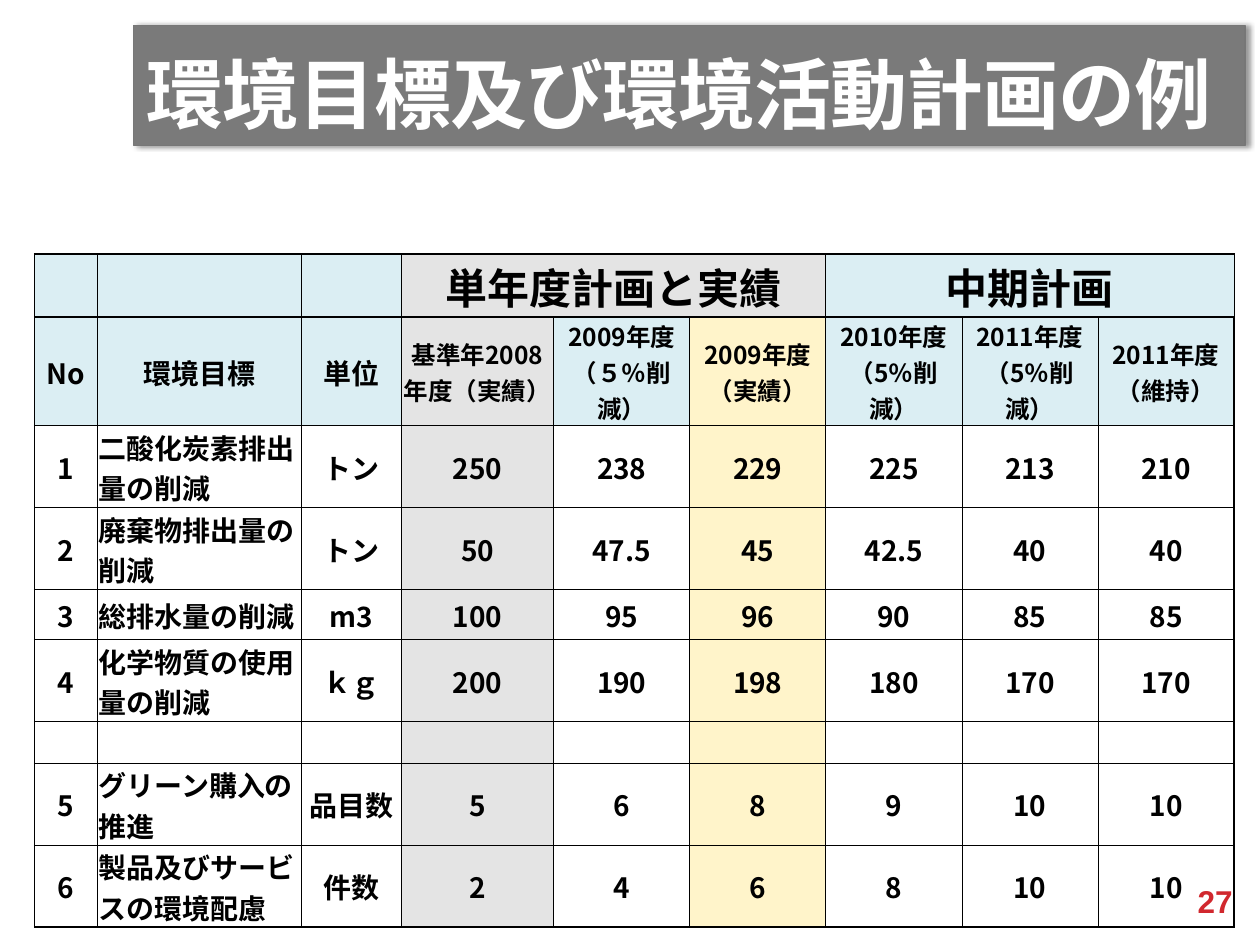
"""Build a slide with a table of environmental targets and yearly plans."""
import dataclasses

import lxml.etree
import pptx
import pptx.dml.color
import pptx.enum.text
import pptx.oxml
import pptx.oxml.ns
import pptx.util


@dataclasses.dataclass(frozen=True)
class Theme:
    latin: str = "Arial"
    japanese: str = "Noto Sans CJK JP"
    black: str = "000000"
    white: str = "FFFFFF"
    banner: str = "7A7A7A"
    banner_line: str = "777777"
    number: str = "D1282E"
    header: str = "DBEEF3"
    baseline: str = "E4E4E4"
    actual: str = "FFF4CA"
    title_size: int = 44
    group_size: int = 24
    number_size: int = 18
    body_size: int = 16
    year_size: int = 14
    thick: float = 1
    thin: float = 0.5


theme = Theme()
rgb = pptx.dml.color.RGBColor.from_string
qn = pptx.oxml.ns.qn
align = pptx.enum.text.PP_ALIGN
anchor = pptx.enum.text.MSO_ANCHOR


def style(paragraph, size, color, latin, alignment):
    paragraph.alignment = alignment
    font = paragraph.font
    font.name, font.size, font.bold = latin, pptx.util.Pt(size), True
    font.color.rgb = rgb(color)
    properties = paragraph._p.pPr.find(qn("a:defRPr"))
    lxml.etree.SubElement(properties, qn("a:ea"), typeface=theme.japanese)
    return properties


def draw_borders(cell, widths):
    properties = cell._tc.get_or_add_tcPr()
    for position, (side, points) in enumerate(zip("LRTB", widths)):
        properties.insert(position, pptx.oxml.parse_xml(
            f'<a:ln{side} xmlns:a="http://schemas.openxmlformats.org/drawingml/2006/main" '
            f'w="{pptx.util.Pt(points)}"><a:solidFill><a:srgbClr val="{theme.black}"/>'
            f'</a:solidFill></a:ln{side}>'))


presentation = pptx.Presentation()
presentation.slide_width = pptx.util.Inches(10)
presentation.slide_height = pptx.util.Inches(7.5)
width, height = presentation.slide_width, presentation.slide_height
slide = presentation.slides.add_slide(presentation.slide_layouts[5])

title = slide.shapes.title
title.left, title.top = int(width * 0.106), int(height * 0.027)
title.width, title.height = int(width * 0.882), int(height * 0.127)
title.fill.solid()
title.fill.fore_color.rgb = rgb(theme.banner)
title.line.color.rgb = rgb(theme.banner_line)
title.line.width = pptx.util.Pt(theme.thick)
title.shadow.inherit = False
shadow = lxml.etree.SubElement(
    title._element.spPr.find(qn("a:effectLst")), qn("a:outerShdw"),
    blurRad=str(pptx.util.Pt(3.1)), dist=str(pptx.util.Pt(1.8)), dir="0")
shadow_color = lxml.etree.SubElement(shadow, qn("a:srgbClr"), val=theme.black)
lxml.etree.SubElement(shadow_color, qn("a:alpha"), val="40000")
title.text_frame.text = "環境目標及び環境活動計画の例"
title.text_frame.auto_size = pptx.enum.text.MSO_AUTO_SIZE.NONE
title.text_frame.vertical_anchor = anchor.BOTTOM
title_font = style(title.text_frame.paragraphs[0], theme.title_size,
                   theme.white, theme.latin, align.LEFT)
title_font.set("spc", "-60")

number = slide.shapes.add_textbox(
    int(width * 0.933), int(height * 0.927), int(width * 0.063), int(height * 0.053))
number.text_frame.word_wrap = True
number.text_frame.vertical_anchor = anchor.MIDDLE
number.text_frame.text = "27"
style(number.text_frame.paragraphs[0], theme.number_size, theme.number,
      theme.latin, align.CENTER)

rows = [
    ["", "", "", "単年度計画と実績", "", "", "中期計画", "", ""],
    ["No", "環境目標", "単位", "基準年2008\v年度（実績）", "2009年度\v（５％削減）",
     "2009年度\v（実績）", "2010年度\v（5％削減）", "2011年度\v（5％削減）",
     "2011年度\v（維持）"],
    ["1", "二酸化炭素排出量の削減", "トン", "250", "238", "229", "225", "213", "210"],
    ["2", "廃棄物排出量の削減", "トン", "50", "47.5", "45", "42.5", "40", "40"],
    ["3", "総排水量の削減", "m3", "100", "95", "96", "90", "85", "85"],
    ["4", "化学物質の使用量の削減", "ｋｇ", "200", "190", "198", "180", "170", "170"],
    [""] * 9,
    ["5", "グリーン購入の推進", "品目数", "5", "6", "8", "9", "10", "10"],
    ["6", "製品及びサービスの環境配慮", "件数", "2", "4", "6", "8", "10", "10"],
]
column_widths = [0.5, 1.62, 0.79, 1.21] + [1.08] * 5
row_heights = [0.5, 0.86, 0.65, 0.65, 0.4, 0.65, 0.33, 0.65, 0.65]
thick_columns, thick_rows = {0, 3, 9}, {0, 1, 2, 9}
column_fills = {3: theme.baseline, 5: theme.actual}

table = slide.shapes.add_table(
    len(rows), len(column_widths), int(width * 0.0275), int(height * 0.269),
    pptx.util.Inches(sum(column_widths)), pptx.util.Inches(sum(row_heights))).table
table.first_row = table.horz_banding = False
for column, inches in zip(table.columns, column_widths):
    column.width = pptx.util.Inches(inches)
for row, inches in zip(table.rows, row_heights):
    row.height = pptx.util.Inches(inches)
for first in (3, 6):
    table.cell(0, first).merge(table.cell(0, first + 2))

for r, values in enumerate(rows):
    for c, value in enumerate(values):
        cell = table.cell(r, c)
        cell.margin_left = cell.margin_right = cell.margin_top = pptx.util.Inches(0.01)
        cell.margin_bottom = 0
        cell.vertical_anchor = anchor.MIDDLE
        fill = column_fills.get(c, theme.header if r < 2 else None)
        if fill:
            cell.fill.solid()
            cell.fill.fore_color.rgb = rgb(fill)
        else:
            cell.fill.background()
        draw_borders(cell, [theme.thick if thick else theme.thin for thick in (
            c in thick_columns, c + 1 in thick_columns,
            r in thick_rows, r + 1 in thick_rows)])
        size = theme.body_size
        if r == 0 and value:
            size = theme.group_size
        elif r == 1 and c > 2:
            size = theme.year_size
        paragraph = cell.text_frame.paragraphs[0]
        paragraph.text = value
        style(paragraph, size, theme.black, theme.japanese,
              align.LEFT if c == 1 and r > 1 else align.CENTER)

presentation.save("out.pptx")
